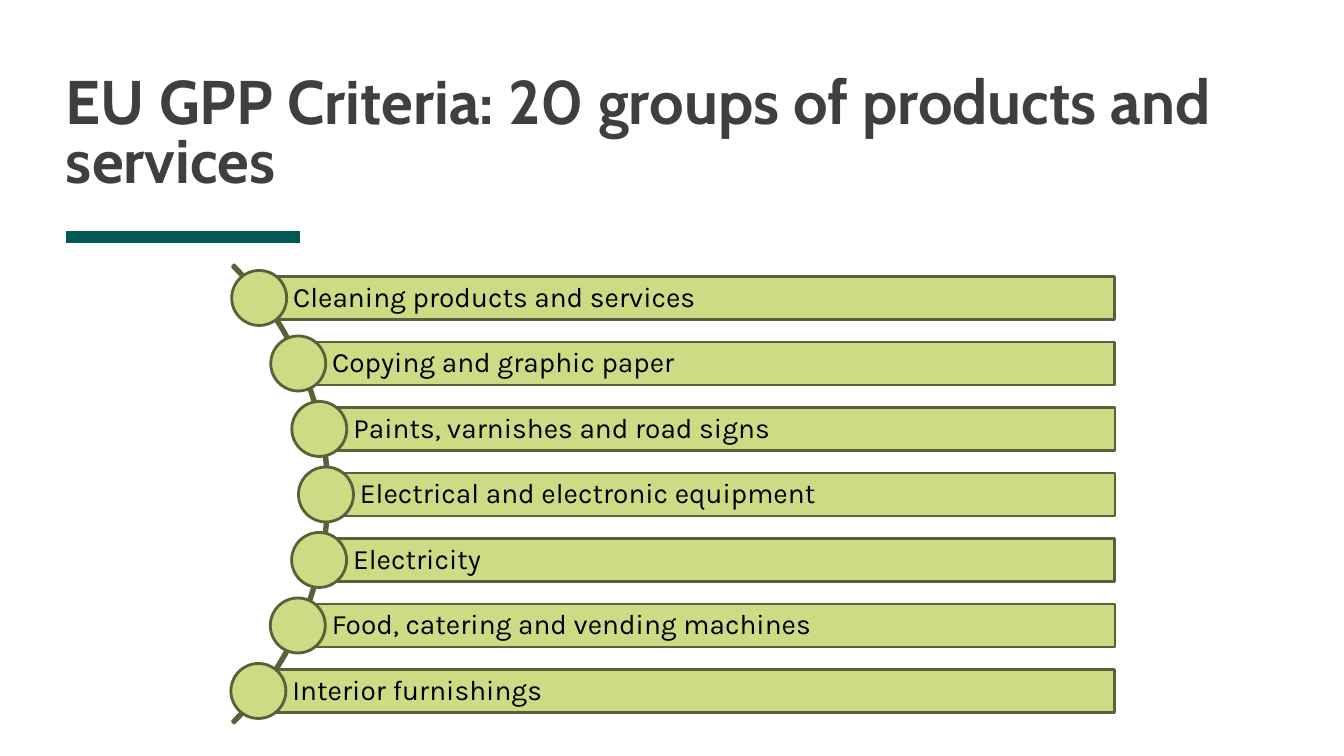
import math
import pptx
import pptx.util
import pptx.dml.color
import pptx.enum.shapes
import pptx.enum.text
from lxml import etree

TITLE = "EU GPP Criteria: 20 groups of products and services"
GROUPS = [
    "Cleaning products and services",
    "Copying and graphic paper",
    "Paints, varnishes and road signs",
    "Electrical and electronic equipment",
    "Electricity",
    "Food, catering and vending machines",
    "Interior furnishings",
]
THEME = {
    "title_font": "Cabin", "title_size": 44, "title_color": "3F3F3F",
    "body_font": "Karla", "body_size": 20, "body_color": "000000",
    "accent": "035854", "accent_width": 8,
    "fill": "CCDB84", "outline": "59603A", "outline_width": 2,
}
SLIDE = (1344, 756)
TITLE_BOX = (66, 22, 1210, 173)
RULE = (66, 237, 300, 237)
ARC_X, ARC_Y, ARC_SIDE = 5, 494, 648
ARC_ADJUSTMENTS = (189, 27, 0.004)
CURVE_RADIUS = 321
FIRST_Y, LAST_Y = 298, 691
BAR_RIGHT, BAR_HEIGHT, DOT = 1115, 43, 55
BAR_INSETS = (34, 6, 6, 6)
SHAPES = pptx.enum.shapes.MSO_SHAPE
ANCHOR = pptx.enum.text.MSO_ANCHOR


def emu(*lengths):
    return [round(n * 914400 / 100.8) for n in lengths]


def color(name):
    return pptx.dml.color.RGBColor.from_string(THEME[name])


def write(sp, text, style, insets, anchor, spacing):
    tf = sp.text_frame
    tf.word_wrap = True
    tf.vertical_anchor = anchor
    tf.margin_left, tf.margin_top, tf.margin_right, tf.margin_bottom = emu(*insets)
    p = tf.paragraphs[0]
    p.alignment = pptx.enum.text.PP_ALIGN.LEFT
    p.line_spacing = spacing
    r = p.add_run()
    r.text = text
    r.font.name = THEME[style + "_font"]
    r.font.size = pptx.util.Pt(THEME[style + "_size"])
    r.font.color.rgb = color(style + "_color")
    return r


def add_shape(s, kind, *box):
    sp = s.shapes.add_shape(kind, *emu(*box))
    sp.shadow.inherit = False
    sp.fill.solid()
    sp.fill.fore_color.rgb = color("fill")
    sp.line.color.rgb = color("outline")
    sp.line.width = pptx.util.Pt(THEME["outline_width"])
    return sp


def add_title(s):
    rule = s.shapes.add_connector(pptx.enum.shapes.MSO_CONNECTOR.STRAIGHT, *emu(*RULE))
    rule.line.color.rgb = color("accent")
    rule.line.width = pptx.util.Pt(THEME["accent_width"])
    etree.SubElement(rule._element.spPr, pptx.oxml.ns.qn("a:effectLst"))
    sp = s.shapes.add_textbox(*emu(*TITLE_BOX))
    r = write(sp, TITLE, "title", (0, 0, 0, 0), ANCHOR.BOTTOM, 0.8)
    r.font.bold = True


def add_groups(s):
    half = ARC_SIDE / 2
    arc = add_shape(s, SHAPES.BLOCK_ARC, ARC_X - half, ARC_Y - half, ARC_SIDE, ARC_SIDE)
    for i, value in enumerate(ARC_ADJUSTMENTS):
        arc.adjustments[i] = value
    pitch = (LAST_Y - FIRST_Y) / (len(GROUPS) - 1)
    for i, group in enumerate(GROUPS):
        y = FIRST_Y + i * pitch
        x = ARC_X + math.sqrt(CURVE_RADIUS ** 2 - (y - ARC_Y) ** 2)
        bar = add_shape(s, SHAPES.RECTANGLE, x, y - BAR_HEIGHT / 2, BAR_RIGHT - x, BAR_HEIGHT)
        write(bar, group, "body", BAR_INSETS, ANCHOR.MIDDLE, 0.9)
        add_shape(s, SHAPES.OVAL, x - DOT / 2, y - DOT / 2, DOT, DOT)


def main():
    prs = pptx.Presentation()
    prs.slide_width, prs.slide_height = emu(*SLIDE)
    s = prs.slides.add_slide(prs.slide_layouts[6])
    add_title(s)
    add_groups(s)
    prs.save("out.pptx")


if __name__ == "__main__":
    main()
